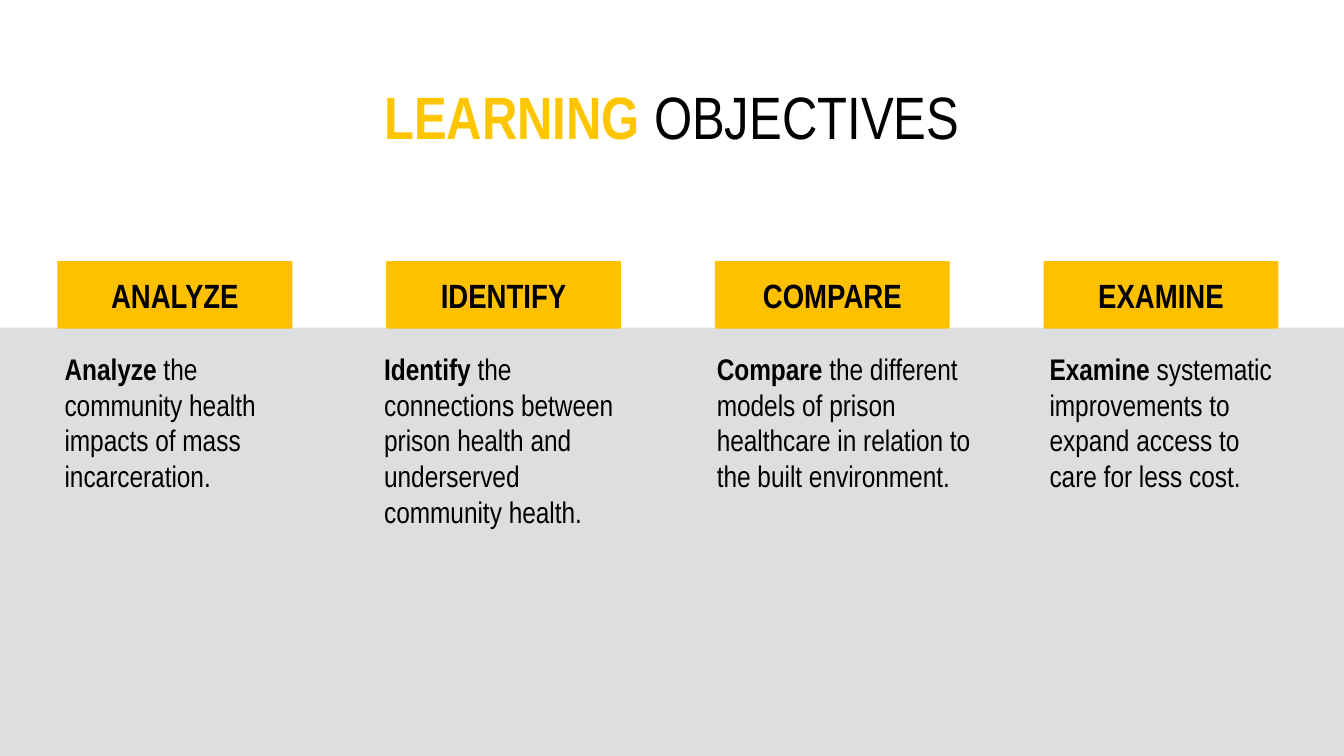
from pptx import Presentation
from pptx.dml.color import RGBColor
from pptx.enum.shapes import MSO_SHAPE
from pptx.enum.text import MSO_ANCHOR, MSO_AUTO_SIZE, PP_ALIGN
from pptx.util import Inches, Pt

RECT = MSO_SHAPE.RECTANGLE
MIDDLE, TOP = MSO_ANCHOR.MIDDLE, MSO_ANCHOR.TOP
CENTER, LEFT = PP_ALIGN.CENTER, PP_ALIGN.LEFT
FIT_SHAPE = MSO_AUTO_SIZE.SHAPE_TO_FIT_TEXT

COLORS = {"panel": "DCDEDF", "label": "FFC000", "accent": "FFC600", "text": "000000"}
FONT = "Arial Narrow"
SLIDE_W, SLIDE_H = 13.33, 7.5
PANEL_TOP = 3.25
LABEL_LEFT, LABEL_PITCH, LABEL_W, LABEL_H = 0.57, 3.26, 2.33, 0.67

OBJECTIVES = [
    ("Analyze", " the community health impacts of mass incarceration.", 0.64, 2.55, 1.54),
    ("Identify", " the connections between prison health and underserved community health.",
     3.81, 2.38, 1.9),
    ("Compare", " the different models of prison healthcare in relation to the built environment.",
     7.11, 2.54, 1.54),
    ("Examine", " systematic improvements to expand access to care for less cost.",
     10.41, 2.26, 1.54),
]


def set_attrs(obj, values):
    for name, value in values.items():
        setattr(obj, name, value)


def write_runs(p, size, runs):
    for text, bold, color in runs:
        r = p.add_run()
        r.text = text
        set_attrs(r.font, {"name": FONT, "size": Pt(size), "bold": bold})
        r.font.color.rgb = RGBColor.from_string(COLORS[color])


def add_rect(slide, x, y, w, h, color):
    sp = slide.shapes.add_shape(RECT, Inches(x), Inches(y), Inches(w), Inches(h))
    sp.shadow.inherit = False
    sp.fill.solid()
    sp.fill.fore_color.rgb = RGBColor.from_string(COLORS[color])
    sp.line.fill.background()
    return sp


def add_label(slide, x, text):
    sp = add_rect(slide, x, PANEL_TOP + 0.01 - LABEL_H, LABEL_W, LABEL_H, "label")
    tf = sp.text_frame
    tf.vertical_anchor = MIDDLE
    p = tf.paragraphs[0]
    p.alignment = CENTER
    write_runs(p, 24, [(text, True, "text")])


def add_text(slide, x, y, w, h, size, runs, inset, frame, paragraph):
    tf = slide.shapes.add_textbox(Inches(x), Inches(y), Inches(w), Inches(h)).text_frame
    side, edge = (Inches(v) for v in inset)
    set_attrs(tf, {"word_wrap": True, "margin_left": side, "margin_right": side,
                   "margin_top": edge, "margin_bottom": edge, **frame})
    p = tf.paragraphs[0]
    set_attrs(p, paragraph)
    write_runs(p, size, runs)


def main():
    prs = Presentation()
    prs.slide_width, prs.slide_height = Inches(SLIDE_W), Inches(SLIDE_H)
    slide = prs.slides.add_slide(prs.slide_layouts[6])
    add_rect(slide, 0, PANEL_TOP, SLIDE_W, SLIDE_H - PANEL_TOP, "panel")
    add_text(slide, 0, 0.69, SLIDE_W, 1.27, 42.7,
             [("LEARNING ", True, "accent"), ("OBJECTIVES", False, "text")],
             (0.33, 0.07), {"vertical_anchor": MIDDLE},
             {"alignment": CENTER, "line_spacing": Pt(26)})
    for i, (verb, rest, x, w, h) in enumerate(OBJECTIVES):
        add_label(slide, LABEL_LEFT + i * LABEL_PITCH, verb.upper())
        add_text(slide, x, 3.43, w, h, 21.3,
                 [(verb, True, "text"), (rest, False, "text")],
                 (0, 0.05), {"vertical_anchor": TOP, "auto_size": FIT_SHAPE},
                 {"alignment": LEFT})
    prs.save("out.pptx")


if __name__ == "__main__":
    main()
